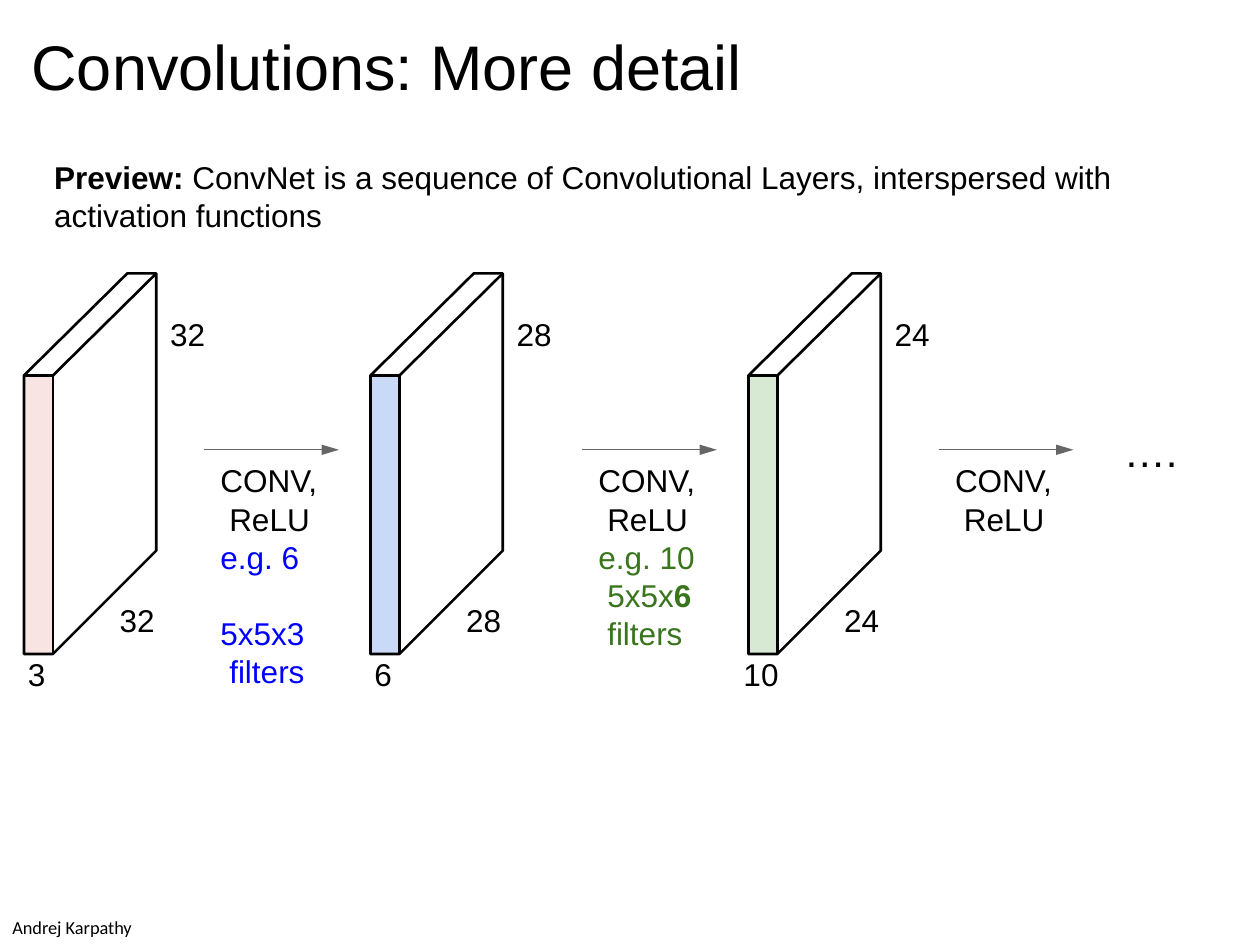
"""Build the slide that previews a ConvNet as a sequence of convolutional layers."""
from dataclasses import dataclass

from lxml import etree
from pptx import Presentation
from pptx.dml.color import RGBColor
from pptx.enum.shapes import MSO_CONNECTOR, MSO_SHAPE
from pptx.enum.text import MSO_ANCHOR, MSO_AUTO_SIZE, PP_ALIGN
from pptx.oxml.ns import qn
from pptx.util import Inches, Pt

RECTANGLE = MSO_SHAPE.RECTANGLE
STRAIGHT = MSO_CONNECTOR.STRAIGHT
TOP = MSO_ANCHOR.TOP
NO_AUTOFIT = MSO_AUTO_SIZE.NONE
LEFT, CENTER = PP_ALIGN.LEFT, PP_ALIGN.CENTER

BLACK, GRAY, BLUE, GREEN = "000000", "666666", "0000FF", "38751C"
TITLE_ONLY = 5
BACK_TOP, FRONT_TOP, BACK_BOTTOM, FRONT_BOTTOM = 2.17, 2.98, 4.37, 5.19
THICKNESS, DEPTH = 0.23, 0.82
ARROW_Y, ARROW_LENGTH = 3.57, 1.07
HANGING = 0.08

# left, face colour, spatial size, channels
VOLUMES = [
    (0.19, "F9E4E4", "32", "3"),
    (2.94, "C8DAF7", "28", "6"),
    (5.94, "D8E9D3", "24", "10"),
]


@dataclass
class Line:
    """One line of text: (text, bold) runs with colour, indent and gap before."""
    runs: list
    color: str = BLACK
    indent: float = 0.01
    gap: float = 0


def plain(text, **options):
    """Return a line that holds one regular run."""
    return Line([(text, False)], **options)


def rgb(color):
    """Turn a hex string into a colour."""
    return RGBColor.from_string(color)


def write(frame, lines, size=18, font="Arial", align=LEFT, spacing=None):
    """Fill a text frame with lines, run by run."""
    for number, line in enumerate(lines):
        paragraph = frame.add_paragraph() if number else frame.paragraphs[0]
        paragraph.alignment = align
        paragraph.line_spacing = spacing
        if line.gap:
            paragraph.space_before = Pt(line.gap)
        properties = paragraph._p.get_or_add_pPr()
        properties.set("marL", str(Inches(line.indent)))
        properties.set("indent", "0")
        for text, bold in line.runs:
            run = paragraph.add_run()
            run.text = text
            run.font.size, run.font.name, run.font.bold = Pt(size), font, bold
            run.font.color.rgb = rgb(line.color)


def clear_margins(frame):
    """Let text start at the top left corner of its frame."""
    frame.margin_left = frame.margin_right = 0
    frame.margin_top = frame.margin_bottom = 0
    frame.vertical_anchor = TOP
    frame.auto_size = NO_AUTOFIT
    frame.word_wrap = True


def add_text(slide, box, lines, **style):
    """Add a wrapped text box without margins."""
    frame = slide.shapes.add_textbox(*map(Inches, box)).text_frame
    clear_margins(frame)
    write(frame, lines, **style)


def add_title(slide, text):
    """Place and fill the title placeholder."""
    title = slide.shapes.title
    title.left, title.top = Inches(0.25), Inches(0.22)
    title.width, title.height = Inches(9.51), Inches(0.61)
    clear_margins(title.text_frame)
    write(title.text_frame, [plain(text, indent=0)], size=36)


def add_outline(slide, points, close):
    """Draw an unfilled black outline through the points."""
    start, *rest = [(Inches(x), Inches(y)) for x, y in points]
    builder = slide.shapes.build_freeform(*start)
    builder.add_line_segments(rest, close=close)
    outline = builder.convert_to_shape()
    outline.shadow.inherit = False
    outline.fill.background()
    outline.line.color.rgb, outline.line.width = rgb(BLACK), Pt(1.5)


def add_line(slide, start, end, color, width):
    """Draw a straight line and return it."""
    line = slide.shapes.add_connector(STRAIGHT, *map(Inches, start + end))
    line.line.color.rgb, line.line.width = rgb(color), Pt(width)
    etree.SubElement(line._element.spPr, qn("a:effectLst"))
    return line


def add_arrow(slide, left):
    """Draw a thin arrow to the next volume."""
    arrow = add_line(slide, (left, ARROW_Y), (left + ARROW_LENGTH, ARROW_Y), GRAY, 0.75)
    etree.SubElement(arrow.line._get_or_add_ln(), qn("a:tailEnd"),
                     type="triangle", w="med", len="lg")


def add_volume(slide, left, color, size, channels):
    """Draw a layer's box with its three dimensions."""
    edge, right = left + THICKNESS, left + THICKNESS + DEPTH
    face = slide.shapes.add_shape(RECTANGLE, Inches(left), Inches(FRONT_TOP),
                                  Inches(THICKNESS), Inches(FRONT_BOTTOM - FRONT_TOP))
    face.shadow.inherit = False
    face.fill.solid()
    face.fill.fore_color.rgb = rgb(color)
    face.line.fill.background()
    add_outline(slide, [(left, FRONT_TOP), (left + DEPTH, BACK_TOP), (right, BACK_TOP),
                        (right, BACK_BOTTOM), (edge, FRONT_BOTTOM), (left, FRONT_BOTTOM)], True)
    add_outline(slide, [(left, FRONT_TOP), (edge, FRONT_TOP), (right, BACK_TOP)], False)
    add_line(slide, (edge, FRONT_TOP), (edge, FRONT_BOTTOM), BLACK, 1.5)
    add_text(slide, (left + 0.75, 4.77, 0.31, 0.31), [plain(size)])
    add_text(slide, (left + 1.15, 2.5, 0.31, 0.31), [plain(size)])
    add_text(slide, (left - 0.06, 5.2, 0.31, 0.31), [plain(channels)], align=CENTER)


def add_step(slide, left, filters):
    """Draw an arrow with the operation and its filters below."""
    add_arrow(slide, left)
    operation = [plain("CONV,"), plain("ReLU", indent=HANGING)]
    add_text(slide, (left + 0.12, 3.66, 0.9, 0.62 + 0.3 * len(filters)),
             operation + filters, spacing=1.01)


def add_credit(slide, name):
    """Add the author's name at the bottom left."""
    frame = slide.shapes.add_textbox(0, Inches(7.22), Inches(1.17), Inches(0.28)).text_frame
    frame.word_wrap = False
    write(frame, [plain(name, indent=0)], size=10.5, font="Calibri")


def main():
    """Build and save the slide."""
    deck = Presentation()
    deck.slide_width, deck.slide_height = Inches(10), Inches(7.5)
    slide = deck.slides.add_slide(deck.slide_layouts[TITLE_ONLY])

    add_title(slide, "Convolutions: More detail")
    preview = Line([("Preview: ", True),
                    ("ConvNet is a sequence of Convolutional Layers, "
                     "interspersed with activation functions", False)], indent=0.18)
    add_text(slide, (0.25, 1.25, 9.51, 0.61), [preview], spacing=1.01)

    for volume in VOLUMES:
        add_volume(slide, *volume)

    add_step(slide, 1.62, [
        plain("e.g. 6", color=BLUE),
        plain("5x5x3", color=BLUE, gap=21.6),
        plain("filters", color=BLUE, indent=HANGING),
    ])
    add_step(slide, 4.62, [
        plain("e.g. 10", color=GREEN),
        Line([("5x5x", False), ("6", True)], color=GREEN, indent=HANGING),
        plain("filters", color=GREEN, indent=HANGING),
    ])
    add_step(slide, 7.45, [])
    add_text(slide, (8.91, 3.38, 0.45, 0.41), [plain("….")], size=24)
    add_credit(slide, "Andrej Karpathy")
    deck.save("out.pptx")


if __name__ == "__main__":
    main()
